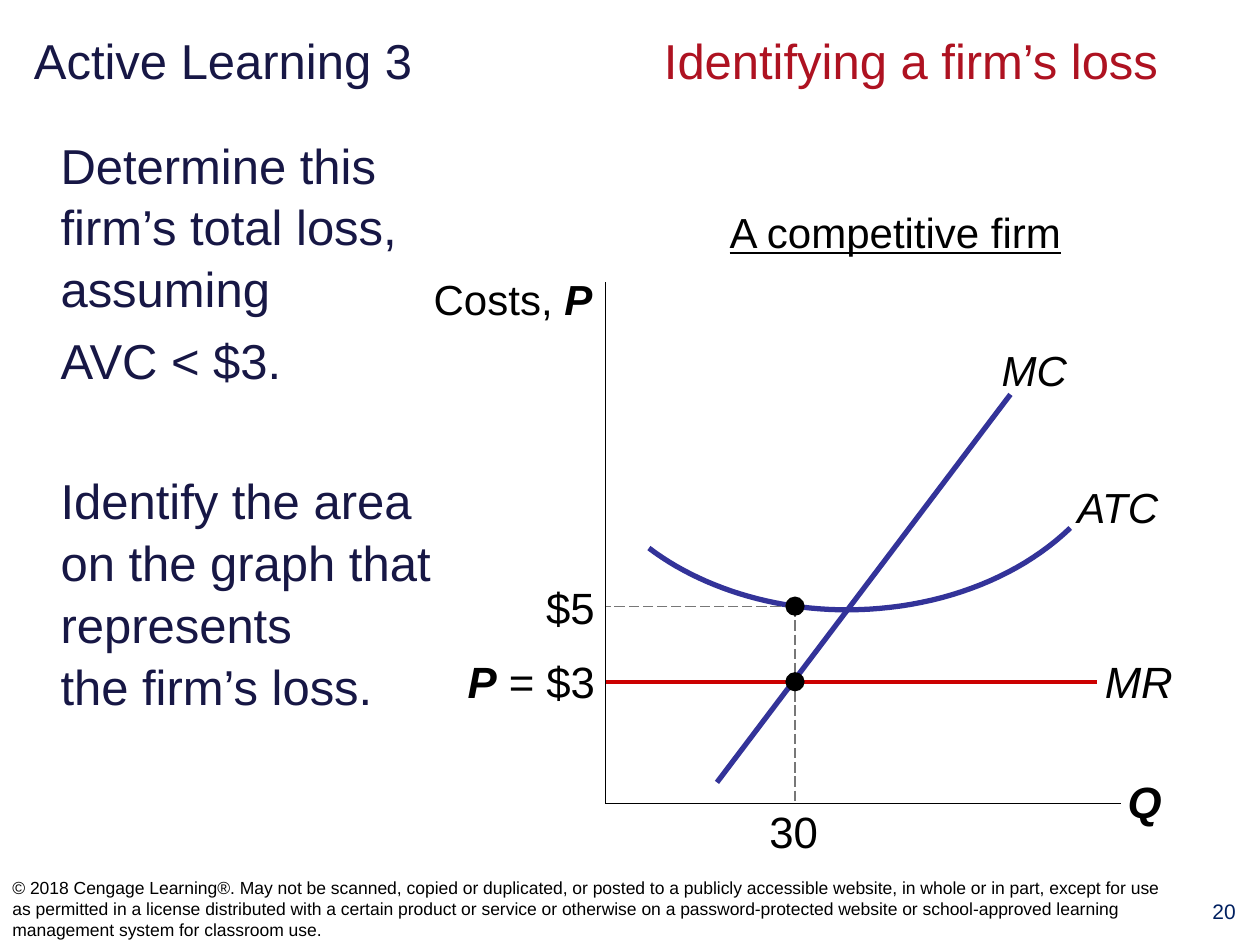
from lxml import etree
from pptx import Presentation
from pptx.dml.color import RGBColor
from pptx.enum.dml import MSO_LINE
from pptx.enum.shapes import MSO_CONNECTOR, MSO_SHAPE
from pptx.enum.text import MSO_ANCHOR, MSO_AUTO_SIZE, PP_ALIGN
from pptx.oxml.ns import qn
from pptx.util import Pt

LEFT, CENTER, RIGHT = PP_ALIGN.LEFT, PP_ALIGN.CENTER, PP_ALIGN.RIGHT
TOP, MIDDLE = MSO_ANCHOR.TOP, MSO_ANCHOR.MIDDLE
STRAIGHT, OVAL = MSO_CONNECTOR.STRAIGHT, MSO_SHAPE.OVAL
LONG_DASH = MSO_LINE.LONG_DASH
NO_AUTOFIT = MSO_AUTO_SIZE.NONE

FONT = "Arial"
BLACK, NAVY, CRIMSON = "000000", "171745", "AE1221"
CURVE, GUIDE, REVENUE, PAGE = "333399", "777777", "CC0000", "002060"


def color(hex_string):
    return RGBColor.from_string(hex_string)


def bezier(start, control_1, control_2, end, steps=24):
    """Points along a cubic curve, both ends included."""
    points = []
    for step in range(steps + 1):
        t = step / steps
        weights = ((1 - t) ** 3, 3 * t * (1 - t) ** 2, 3 * t * t * (1 - t), t ** 3)
        corners = (start, control_1, control_2, end)
        points.append(tuple(sum(w * c[axis] for w, c in zip(weights, corners))
                            for axis in (0, 1)))
    return points


class SlideBuilder:
    def __init__(self, slide):
        self.slide = slide
        self.shapes = slide.shapes

    def style(self, font, size, hex_string):
        font.name, font.size = FONT, Pt(size)
        font.color.rgb = color(hex_string)

    def place(self, shape, left, top, width, height):
        shape.left, shape.top = Pt(left), Pt(top)
        shape.width, shape.height = Pt(width), Pt(height)

    def title(self, box, parts, tab_stop):
        """Title whose (text, colour) parts are set apart by a tab stop."""
        title = self.shapes.title
        self.place(title, *box)
        frame = title.text_frame
        frame.word_wrap, frame.auto_size = True, NO_AUTOFIT
        frame.vertical_anchor = MIDDLE
        paragraph = frame.paragraphs[0]
        paragraph.alignment = LEFT
        properties = paragraph._p.get_or_add_pPr()
        tabs = etree.SubElement(properties, qn("a:tabLst"))
        etree.SubElement(tabs, qn("a:tab"), pos=str(Pt(tab_stop)), algn="l")
        for text, hex_string in parts:
            run = paragraph.add_run()
            run.text = text
            self.style(run.font, 28, hex_string)

    def body(self, box, paragraphs):
        """Unbulleted body text from (text, space before) pairs."""
        body = self.slide.placeholders[1]
        self.place(body, *box)
        frame = body.text_frame
        frame.word_wrap, frame.auto_size = True, NO_AUTOFIT
        for index, (text, space) in enumerate(paragraphs):
            paragraph = frame.add_paragraph() if index else frame.paragraphs[0]
            paragraph.text = text
            properties = paragraph._p.get_or_add_pPr()
            properties.set("marL", "0")
            properties.set("indent", "0")
            etree.SubElement(properties, qn("a:buNone"))
            paragraph.space_before = Pt(space)
            paragraph.line_spacing = 1.05
            self.style(paragraph.font, 28, NAVY)

    def label(self, box, text, size=24, hex_string=BLACK, align=LEFT,
              anchor=TOP, inset=True, symbol=""):
        """Text box; the part of the text equal to symbol is bold italic."""
        shape = self.shapes.add_textbox(*(Pt(value) for value in box))
        frame = shape.text_frame
        frame.word_wrap, frame.vertical_anchor = True, anchor
        if not inset:
            frame.margin_left = frame.margin_right = 0
            frame.margin_top = frame.margin_bottom = 0
        paragraph = frame.paragraphs[0]
        paragraph.alignment = align
        self.style(paragraph.font, size, hex_string)
        before, mark, after = text.partition(symbol) if symbol else (text, "", "")
        for part in filter(None, (before, mark, after)):
            run = paragraph.add_run()
            run.text = part
            if part == symbol:
                run.font.bold = run.font.italic = True
        return paragraph

    def line(self, start, end, hex_string, width=0.75, dash=None):
        line = self.shapes.add_connector(
            STRAIGHT, *(Pt(value) for value in (*start, *end)))
        line.line.color.rgb = color(hex_string)
        line.line.width = Pt(width)
        if dash:
            line.line.dash_style = dash
        etree.SubElement(line._element.spPr, qn("a:effectLst"))

    def curve(self, points, hex_string, width):
        pen = self.shapes.build_freeform(*(Pt(value) for value in points[0]))
        pen.add_line_segments([(Pt(x), Pt(y)) for x, y in points[1:]], close=False)
        curve = pen.convert_to_shape()
        curve.shadow.inherit = False
        curve.fill.background()
        curve.line.color.rgb = color(hex_string)
        curve.line.width = Pt(width)

    def dot(self, center, radius=5.5):
        x, y = center
        dot = self.shapes.add_shape(OVAL, Pt(x - radius), Pt(y - radius),
                                    Pt(2 * radius), Pt(2 * radius))
        dot.shadow.inherit = False
        dot.fill.solid()
        dot.fill.fore_color.rgb = color(BLACK)
        dot.line.fill.background()


def main():
    presentation = Presentation()
    presentation.slide_width, presentation.slide_height = Pt(720), Pt(540)
    slide = presentation.slides.add_slide(presentation.slide_layouts[1])
    page = SlideBuilder(slide)

    page.title((12.2, 8, 696, 52),
               [("Active Learning 3\t", NAVY), ("Identifying a firm’s loss", CRIMSON)],
               tab_stop=360)
    page.body((27.4, 72, 252.7, 435.6), [
        ("Determine this firm’s total loss, assuming", 0),
        ("AVC < $3.", 5.6),
        ("Identify the area on the graph that represents \vthe firm’s loss.", 45),
    ])

    axis_x, axis_y = 346.2, 459.2
    output_x, cost_y, price_y = 454.3, 346.4, 389.6
    origin = (axis_x, axis_y)
    cost_point, price_point = (output_x, cost_y), (output_x, price_y)

    page.line((axis_x, 161.3), origin, BLACK)
    page.line(origin, (640.8, axis_y), BLACK)
    page.label((637.2, 439.2, 42.5, 37.4), "Q", 25, symbol="Q")
    page.label((213.8, 152.6, 131.8, 36), "Costs, P", align=RIGHT, symbol="P")

    page.line((409.7, 447.1), (577.4, 225.4), CURVE, 3)
    page.label((572.4, 196.6, 47.5, 28.8), "MC", inset=False).font.italic = True

    lowest = (483.8, 348.5)
    right_arm = bezier((611.6, 301.7), (581, 331.2), (534.2, 348.5), lowest)
    left_arm = bezier(lowest, (441.4, 348.5), (400.3, 335.5), (370.8, 313.2))
    page.curve(right_arm + left_arm[1:], CURVE, 3)
    page.label((615.6, 275, 58.3, 28.8), "ATC", inset=False).font.italic = True

    heading = page.label((388.1, 113, 247, 38.2), "A competitive firm", align=CENTER)
    heading.font.underline = True
    heading.line_spacing = 1.05

    page.line(cost_point, (axis_x, cost_y), GUIDE, dash=LONG_DASH)
    page.label((303.1, 331.9, 36.7, 30.2), "$5", 25, align=RIGHT, inset=False)
    page.line((axis_x, price_y), (627.1, price_y), REVENUE, 2.25)
    page.label((243.4, 370.8, 103.7, 37.4), "P = $3", 25, align=RIGHT, symbol="P")
    page.label((631.4, 374.4, 47.5, 30.2), "MR", 25, inset=False).font.italic = True

    page.label((437, 460.1, 33.1, 30.2), "30", 25, align=CENTER, inset=False)
    page.line(cost_point, (output_x, axis_y), GUIDE, dash=LONG_DASH)
    for point in (price_point, cost_point):
        page.dot(point)

    page.label(
        (0, 498.2, 677.5, 41.8),
        "© 2018 Cengage Learning®. May not be scanned, copied or duplicated, or posted "
        "to a publicly accessible website, in whole or in part, except for use as "
        "permitted in a license distributed with a certain product or service or "
        "otherwise on a password-protected website or school-approved learning "
        "management system for classroom use.", 10, anchor=MIDDLE)
    page.label((679, 509.8, 41, 29.5), "20", 12, PAGE, CENTER)

    presentation.save("out.pptx")


if __name__ == "__main__":
    main()
